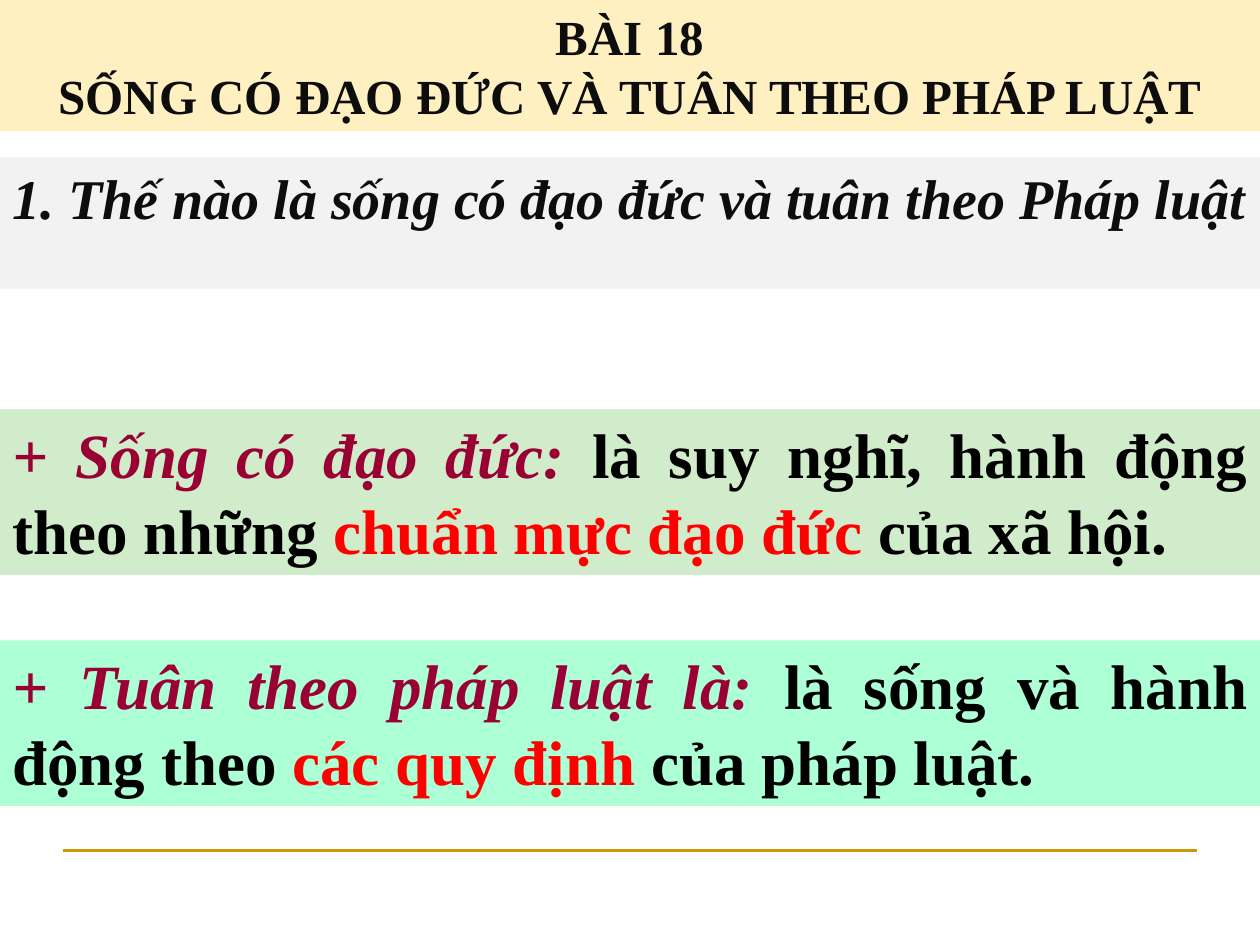
from dataclasses import dataclass

import pptx
import pptx.dml.color
import pptx.enum.shapes
import pptx.enum.text
import pptx.oxml
import pptx.oxml.ns
import pptx.util

Pt = pptx.util.Pt
RGBColor = pptx.dml.color.RGBColor
Align = pptx.enum.text.PP_ALIGN

FONT = "Times New Roman"
WIDTH = 720
CREAM = RGBColor(0xFF, 0xF0, 0xC2)
GREY = RGBColor(0xF2, 0xF2, 0xF2)
GREEN = RGBColor(0xD0, 0xEC, 0xCB)
MINT = RGBColor(0xAD, 0xFF, 0xD6)
GOLD = RGBColor(0xCC, 0x99, 0x00)
INK = RGBColor(0x0D, 0x0D, 0x0D)
BLACK = RGBColor(0x00, 0x00, 0x00)
WINE = RGBColor(0x99, 0x00, 0x33)
RED = RGBColor(0xFF, 0x00, 0x00)


@dataclass(frozen=True)
class Run:
    text: str
    color: RGBColor
    slant: bool = False


@dataclass(frozen=True)
class Band:
    top: float
    height: float
    fill: RGBColor
    size: float
    align: Align
    lines: tuple[tuple[Run, ...], ...]


def define(term: str, start: str, key: str, end: str) -> tuple[Run, ...]:
    """Runs of a definition: slanted term, plain text and a red key phrase."""
    return Run(term, WINE, True), Run(start, BLACK), Run(key, RED), Run(end, BLACK)


TITLE = Band(0, 75, CREAM, 28, Align.CENTER, (
    (Run("BÀI 18", INK),),
    (Run("SỐNG CÓ ĐẠO ĐỨC VÀ TUÂN THEO PHÁP LUẬT", INK),),
))
BANDS = (
    Band(90, 75, GREY, 32, Align.LEFT, (
        (Run("1. Thế nào là sống có đạo đức và tuân theo Pháp luật", INK, True),),
    )),
    Band(234, 94.5, GREEN, 36, Align.JUSTIFY, (
        define("+ Sống có đạo đức: ", "là suy nghĩ, hành động theo những ",
               "chuẩn mực đạo đức ", "của xã hội."),
    )),
    Band(366, 94.5, MINT, 36, Align.JUSTIFY, (
        define("+ Tuân theo pháp luật là: ", "là sống và hành động theo ",
               "các quy định ", "của pháp luật."),
    )),
)


def format_band(shape, band: Band) -> None:
    shape.left, shape.top = Pt(0), Pt(band.top)
    shape.width, shape.height = Pt(WIDTH), Pt(band.height)
    shape.fill.solid()
    shape.fill.fore_color.rgb = band.fill
    shape.line.fill.background()
    frame = shape.text_frame
    frame.word_wrap = True
    frame.auto_size = pptx.enum.text.MSO_AUTO_SIZE.NONE
    frame.vertical_anchor = pptx.enum.text.MSO_ANCHOR.TOP
    for index, line in enumerate(band.lines):
        para = frame.add_paragraph() if index else frame.paragraphs[0]
        para.alignment = band.align
        for part in line:
            run = para.add_run()
            run.text = part.text
            font = run.font
            font.name, font.size = FONT, Pt(band.size)
            font.bold, font.italic = True, part.slant
            font.color.rgb = part.color


def add_band(slide, band: Band) -> None:
    shape = slide.shapes.add_shape(
        pptx.enum.shapes.MSO_SHAPE.RECTANGLE,
        Pt(0), Pt(band.top), Pt(WIDTH), Pt(band.height))
    shape.shadow.inherit = False
    format_band(shape, band)


def add_rule(slide, left: float, right: float, top: float) -> None:
    rule = slide.shapes.add_connector(
        pptx.enum.shapes.MSO_CONNECTOR.STRAIGHT,
        Pt(left), Pt(top), Pt(right), Pt(top))
    rule.line.color.rgb = GOLD
    rule.line.width = Pt(1.5)
    props = rule.element.find(pptx.oxml.ns.qn("p:spPr"))
    props.append(pptx.oxml.parse_xml(
        f"<a:effectLst {pptx.oxml.ns.nsdecls('a')}/>"))


def main() -> None:
    deck = pptx.Presentation()
    deck.slide_width, deck.slide_height = Pt(WIDTH), Pt(540)
    slide = deck.slides.add_slide(deck.slide_layouts.get_by_name("Title Only"))
    add_rule(slide, 36, 684, 486)
    format_band(slide.shapes.title, TITLE)
    for band in BANDS:
        add_band(slide, band)
    deck.save("out.pptx")


if __name__ == "__main__":
    main()
